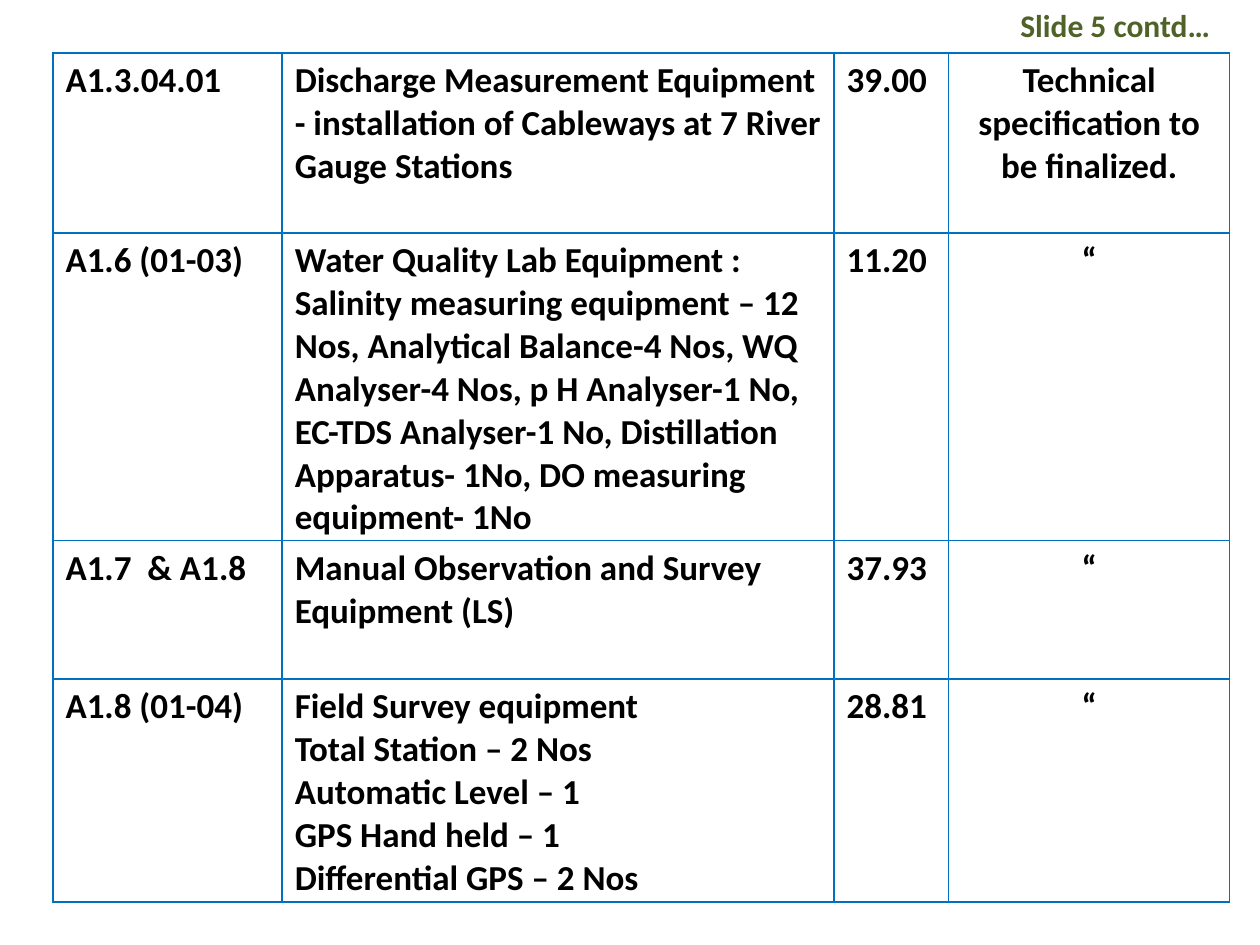
from dataclasses import dataclass

import pptx
import pptx.dml.color
import pptx.enum.text
import pptx.oxml
import pptx.oxml.ns
import pptx.util
from pptx.util import Inches

ALIGN = pptx.enum.text.PP_ALIGN


@dataclass(frozen=True)
class Theme:
    font: str = "Calibri"
    text: str = "000000"
    note: str = "4F6228"
    border: str = "0070C0"
    body_size: int = 20
    note_size: int = 18
    border_width: int = 1


THEME = Theme()

COLUMN_WIDTHS = (1.82, 4.38, 0.91, 2.23)
ROW_HEIGHTS = (1.43, 2.44, 1.1, 1.77)
CENTRED_COLUMN = 3
EQUIPMENT = (
    ("A1.3.04.01",
     "Discharge Measurement Equipment - installation of Cableways at 7 River Gauge Stations",
     "39.00", "Technical specification to be finalized."),
    ("A1.6 (01-03)",
     "Water Quality Lab Equipment :\n"
     "Salinity measuring equipment – 12 Nos, Analytical Balance-4 Nos, WQ Analyser-4 Nos, "
     "p H Analyser-1 No, EC-TDS Analyser-1 No, Distillation Apparatus- 1No, "
     "DO measuring equipment- 1No",
     "11.20", "“"),
    ("A1.7  & A1.8", "Manual Observation and Survey Equipment (LS)", "37.93", "“"),
    ("A1.8 (01-04)",
     "Field Survey equipment\nTotal Station – 2 Nos\nAutomatic Level – 1\n"
     "GPS Hand held – 1\nDifferential GPS – 2 Nos",
     "28.81", "“"),
)


def write_text(tf, text, size=THEME.body_size, color=THEME.text, align=ALIGN.LEFT):
    """Write one bold paragraph for each line of text."""
    tf.word_wrap = True
    for i, line in enumerate(text.split("\n")):
        p = tf.paragraphs[0] if i == 0 else tf.add_paragraph()
        p.alignment = align
        r = p.add_run()
        r.text = line
        r.font.name = THEME.font
        r.font.size = pptx.util.Pt(size)
        r.font.bold = True
        r.font.color.rgb = pptx.dml.color.RGBColor.from_string(color)


def set_borders(cell):
    tc_pr = cell._tc.get_or_add_tcPr()
    width = pptx.util.Pt(THEME.border_width)
    for i, side in enumerate(("lnL", "lnR", "lnT", "lnB")):
        # Borders must come before the fill in the cell properties.
        tc_pr.insert(i, pptx.oxml.parse_xml(
            f'<a:{side} {pptx.oxml.ns.nsdecls("a")} w="{width}"><a:solidFill>'
            f'<a:srgbClr val="{THEME.border}"/></a:solidFill></a:{side}>'))


def add_equipment_table(s, left, top):
    table = s.shapes.add_table(
        len(EQUIPMENT), len(COLUMN_WIDTHS), Inches(left), Inches(top),
        Inches(sum(COLUMN_WIDTHS)), Inches(sum(ROW_HEIGHTS))).table
    table.first_row = table.horz_banding = False
    for column, width in zip(table.columns, COLUMN_WIDTHS):
        column.width = Inches(width)
    for row, height, texts in zip(table.rows, ROW_HEIGHTS, EQUIPMENT):
        row.height = Inches(height)
        for i, (cell, text) in enumerate(zip(row.cells, texts)):
            cell.margin_bottom = 0
            cell.fill.background()
            set_borders(cell)
            write_text(cell.text_frame, text,
                       align=ALIGN.CENTER if i == CENTRED_COLUMN else ALIGN.LEFT)


def add_note(s, text, left, top, width, height):
    sp = s.shapes.add_textbox(Inches(left), Inches(top), Inches(width), Inches(height))
    sp.text_frame.auto_size = pptx.enum.text.MSO_AUTO_SIZE.SHAPE_TO_FIT_TEXT
    write_text(sp.text_frame, text, size=THEME.note_size, color=THEME.note)


def main():
    prs = pptx.Presentation()
    prs.slide_width, prs.slide_height = Inches(10), Inches(7.5)
    s = prs.slides.add_slide(prs.slide_layouts[6])
    add_equipment_table(s, 0.42, 0.42)
    add_note(s, "Slide 5 contd…", 8, 0, 2, 0.4)
    prs.save("out.pptx")


if __name__ == "__main__":
    main()
